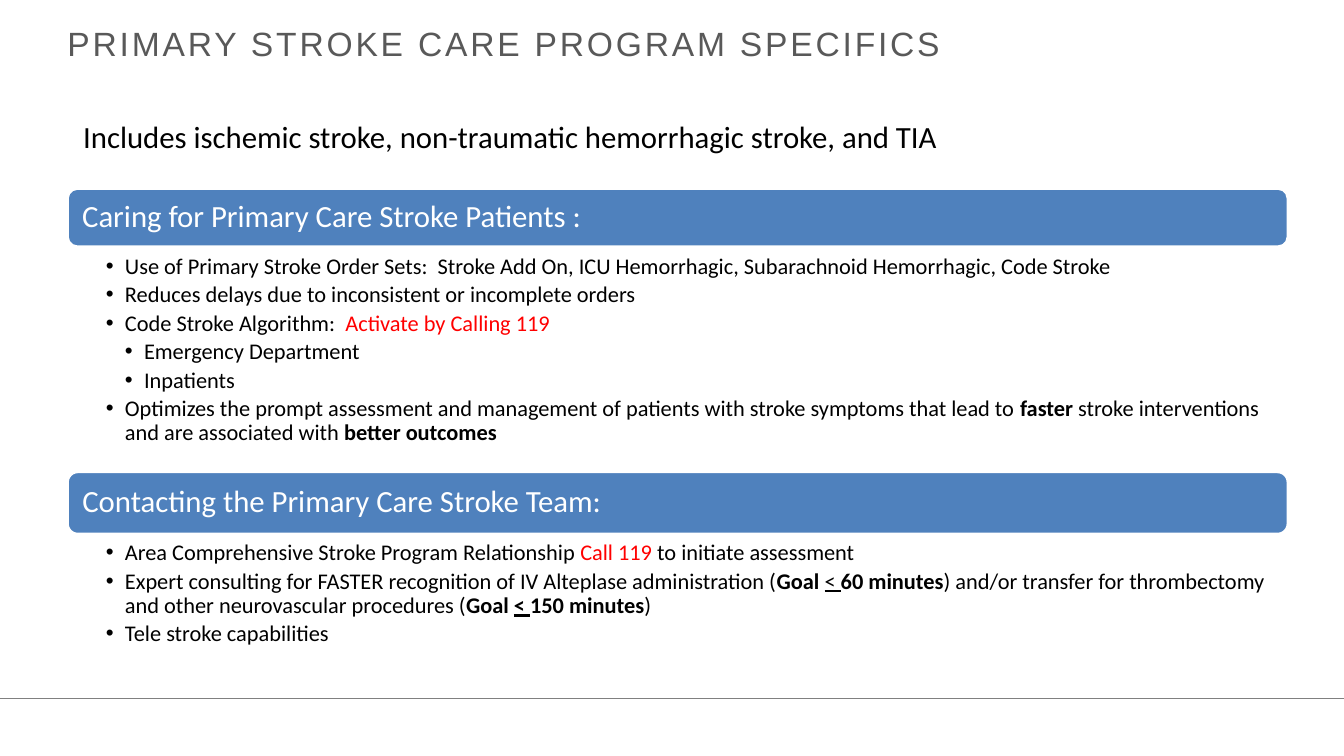
import pptx
import pptx.util
import pptx.dml.color
import pptx.enum.shapes
import pptx.enum.text
from lxml import etree

Cm, Pt = pptx.util.Cm, pptx.util.Pt
ANCHOR = pptx.enum.text.MSO_ANCHOR
LEFT_ALIGN = pptx.enum.text.PP_ALIGN.LEFT
COLOURS = {"white": "FFFFFF", "black": "000000", "blue": "4F81BD",
           "red": "FF0000", "title": "595959", "rule": "808080"}
DRAWING_NS = "{http://schemas.openxmlformats.org/drawingml/2006/main}"
LEFT, WIDTH = Cm(1.7), Cm(30.76)
INDENT = Cm(0.48)


def rgb(name):
    return pptx.dml.color.RGBColor.from_string(COLOURS[name])


def set_font(paragraph, typeface, size, colour):
    paragraph.alignment = LEFT_ALIGN
    paragraph.font.name = typeface
    paragraph.font.size = Pt(size)
    paragraph.font.color.rgb = rgb(colour)


presentation = pptx.Presentation()
presentation.slide_width, presentation.slide_height = Cm(33.87), Cm(19.05)
slide = presentation.slides.add_slide(presentation.slide_layouts[3])
title, care_list, contact_list = slide.placeholders

# Title
title.left, title.top, title.width, title.height = LEFT, Cm(0.51), Cm(30.48), Cm(1.17)
title_frame = title.text_frame
title_frame.margin_left = title_frame.margin_right = 0
title_frame.margin_top = title_frame.margin_bottom = 0
title_frame.vertical_anchor = ANCHOR.MIDDLE
title_frame.text = "PRIMARY STROKE CARE PROGRAM SPECIFICS"
set_font(title_frame.paragraphs[0], "Arial", 24, "title")
title_frame.paragraphs[0].runs[0]._r.get_or_add_rPr().set("spc", "200")

# Footer rule
rule = slide.shapes.add_connector(
    pptx.enum.shapes.MSO_CONNECTOR.STRAIGHT, 0, Cm(17.6), presentation.slide_width, Cm(17.6))
rule.line.color.rgb = rgb("rule")
rule.line.width = Pt(1)
etree.SubElement(rule._element.spPr, DRAWING_NS + "effectLst")

# Introduction and section headings: text, top, height (cm), fill, text colour
headings = [
    ("Includes ischemic stroke, non-traumatic hemorrhagic stroke, and TIA",
     2.49, 2.01, "white", "black"),
    ("Caring for Primary Care Stroke Patients :", 4.75, 1.47, "blue", "white"),
    ("Contacting the Primary Care Stroke Team:", 11.89, 1.57, "blue", "white"),
]
for text, top, height, fill, colour in headings:
    bar = slide.shapes.add_shape(
        pptx.enum.shapes.MSO_SHAPE.ROUNDED_RECTANGLE, LEFT, Cm(top), WIDTH, Cm(height))
    bar.shadow.inherit = False
    bar.fill.solid()
    bar.fill.fore_color.rgb = rgb(fill)
    bar.line.color.rgb = rgb("white")
    bar.line.width = Pt(2)
    bar_frame = bar.text_frame
    bar_frame.word_wrap = True
    bar_frame.margin_left = Cm(0.3)
    bar_frame.vertical_anchor = ANCHOR.MIDDLE
    bar_frame.text = text
    bar_frame.paragraphs[0].line_spacing = 0.9
    set_font(bar_frame.paragraphs[0], "Calibri", 22, colour)

# Lists: each item is a level and its runs, each run a text and its styles
care_items = [
    (0, [("Use of Primary Stroke Order Sets:  Stroke Add On, ICU Hemorrhagic, "
          "Subarachnoid Hemorrhagic, Code Stroke", "")]),
    (0, [("Reduces delays due to inconsistent or incomplete orders", "")]),
    (0, [("Code Stroke Algorithm:  ", ""), ("Activate by Calling 119", "red")]),
    (1, [("Emergency Department", "")]),
    (1, [("Inpatients", "")]),
    (0, [("Optimizes the prompt assessment and management of patients with stroke "
          "symptoms that lead to ", ""), ("faster", "bold"),
         (" stroke interventions and are associated with ", ""),
         ("better outcomes", "bold")]),
]
contact_items = [
    (0, [("Area Comprehensive Stroke Program Relationship ", ""),
         ("Call 119 ", "red"), ("to initiate assessment", "")]),
    (0, [("Expert consulting for FASTER recognition of IV Alteplase administration (", ""),
         ("Goal ", "bold"), ("< ", "underline"), ("60 minutes", "bold"),
         (") and/or transfer for thrombectomy and other neurovascular procedures (", ""),
         ("Goal ", "bold"), ("< ", "bold underline"), ("150 minutes", "bold"), (")", "")]),
    (0, [("Tele stroke capabilities", "")]),
]
for body, top, height, items in [(care_list, 6.38, 5.4, care_items),
                                 (contact_list, 13.59, 3.53, contact_items)]:
    body.left, body.top, body.width, body.height = LEFT, Cm(top), WIDTH, Cm(height)
    frame = body.text_frame
    frame.auto_size = pptx.enum.text.MSO_AUTO_SIZE.NONE
    frame.word_wrap = True
    frame.margin_left, frame.margin_right = Cm(0.97), Cm(0.3)
    frame.margin_top = frame.margin_bottom = Cm(0.05)
    for number, (level, runs) in enumerate(items):
        item = frame.add_paragraph() if number else frame.paragraphs[0]
        item.level = level
        item.line_spacing = 0.9
        item.space_before, item.space_after = Pt(0), Pt(3)
        properties = item._p.get_or_add_pPr()
        properties.set("marL", str(INDENT * (level + 1)))
        properties.set("indent", str(-INDENT))
        etree.SubElement(properties, DRAWING_NS + "buChar", char="•")
        set_font(item, "Calibri", 16, "black")
        for text, styles in runs:
            run = item.add_run()
            run.text = text
            if "bold" in styles:
                run.font.bold = True
            if "underline" in styles:
                run.font.underline = True
            if "red" in styles:
                run.font.color.rgb = rgb("red")

presentation.save("out.pptx")
